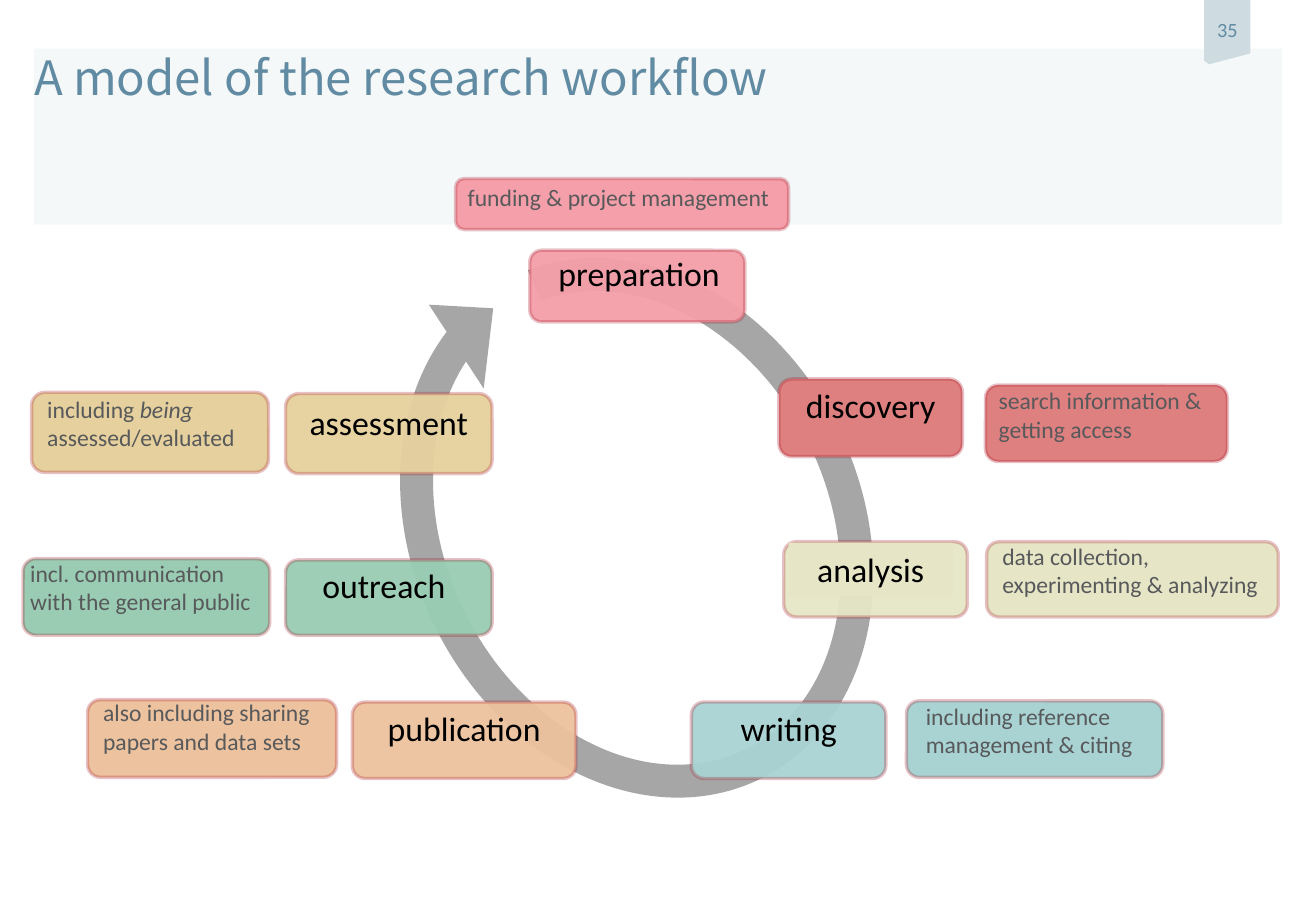
import pptx
import pptx.util
import pptx.dml.color
import pptx.enum.shapes
import pptx.enum.text
import pptx.oxml
import pptx.oxml.ns

PX = 9144
LABEL_HEIGHT = 44
ALIGN = pptx.enum.text.PP_ALIGN
ANCHOR = pptx.enum.text.MSO_ANCHOR
AUTO_SIZE = pptx.enum.text.MSO_AUTO_SIZE
SHAPE = pptx.enum.shapes.MSO_SHAPE

STAGES = [
    {"name": "preparation", "fill": "F49FA9", "opacity": 95,
     "card": (436, 206, 177, 59), "label": (5, -3, 170),
     "note_card": (375, 147, 274, 42), "note_text": (0, -1, 280, 34),
     "note": [[("funding & project management", False)]]},
    {"name": "discovery", "fill": "DF8080", "opacity": 100,
     "card": (641, 312, 151, 64), "label": (3, 0, 145),
     "note_card": (811, 317, 199, 63), "note_text": (1, -4, 206, 57),
     "note": [[("search information &", False)], [("getting access", False)]]},
    {"name": "analysis", "fill": "E6E6C7", "opacity": 95, "label_filled": True,
     "card": (645, 446, 151, 62), "label": (4, 1, 135),
     "note_card": (812, 446, 240, 62), "note_text": (3, -5, 243, 57),
     "note": [[("data collection,", False)], [("experimenting & analyzing", False)]]},
    {"name": "writing", "fill": "A9D3D3", "opacity": 95,
     "card": (569, 578, 160, 63), "label": (6, 0, 148),
     "note_card": (746, 577, 211, 63), "note_text": (6, -4, 241, 57),
     "note": [[("including reference management & citing", False)]]},
    {"name": "publication", "fill": "EDC29E", "opacity": 95,
     "card": (290, 578, 184, 63), "label": (7, 0, 170),
     "note_card": (72, 576, 205, 64), "note_text": (3, -6, 204, 57),
     "note": [[("also including sharing", False)], [("papers and data sets", False)]]},
    {"name": "outreach", "fill": "99CCB3", "opacity": 95,
     "card": (235, 461, 170, 62), "label": (-4, -1, 170),
     "note_card": (19, 460, 203, 63), "note_text": (-4, -5, 206, 57),
     "note": [[("incl. communication", False)], [("with the general public", False)]]},
    {"name": "assessment", "fill": "E6D19E", "opacity": 95,
     "card": (235, 324, 170, 66), "label": (0, 2, 170),
     "note_card": (26, 323, 195, 66), "note_text": (3, -3, 179, 57),
     "note": [[("including ", False), ("being", True)], [("assessed/evaluated", False)]]},
]


def emu(*lengths):
    return [pptx.util.Emu(length * PX) for length in lengths]


def color(value):
    return pptx.dml.color.RGBColor.from_string(value)


def paint(fill, value, opacity=100):
    fill.solid()
    fill.fore_color.rgb = color(value)
    if opacity < 100:
        solid = fill._xPr.find(pptx.oxml.ns.qn("a:solidFill"))
        alpha = pptx.oxml.parse_xml(
            f'<a:alpha {pptx.oxml.ns.nsdecls("a")} val="{opacity * 1000}"/>')
        solid[0].append(alpha)


def write(para, text, size, value, font="Calibri", italic=False):
    span = para.add_run()
    span.text = text
    span.font.name = font
    span.font.size = pptx.util.Pt(size)
    span.font.color.rgb = color(value)
    if italic:
        span.font.italic = True


def add_card(shapes, box, fill, opacity=100):
    card = shapes.add_shape(SHAPE.ROUNDED_RECTANGLE, *emu(*box))
    card.shadow.inherit = False
    paint(card.fill, fill, opacity)
    paint(card.line.fill, "A41224", 25)
    card.line.width = pptx.util.Pt(2)


def add_text(shapes, box, lines, size, value, align):
    text_box = shapes.add_textbox(*emu(*box))
    frame = text_box.text_frame
    frame.word_wrap = True
    frame.auto_size = AUTO_SIZE.SHAPE_TO_FIT_TEXT
    for index, line in enumerate(lines):
        para = frame.add_paragraph() if index else frame.paragraphs[0]
        para.alignment = align
        for text, italic in line:
            write(para, text, size, value, italic=italic)
    return text_box


def add_title(page, box):
    title = page.shapes.title
    title.left, title.top, title.width, title.height = emu(*box)
    paint(title.fill, "F5F8F9")
    frame = title.text_frame
    frame.margin_left = frame.margin_top = frame.margin_right = frame.margin_bottom = 0
    frame.vertical_anchor = ANCHOR.TOP
    frame.word_wrap = True
    frame.auto_size = AUTO_SIZE.NONE
    para = frame.paragraphs[0]
    para.alignment = ALIGN.LEFT
    write(para, "A model of the research workflow", 28, "608BA3", "Noto Sans CJK SC")


def add_page_number(page, box):
    left, top, width, height = box
    builder = page.shapes.build_freeform(left, top, scale=PX)
    builder.add_line_segments([
        (left + width, top), (left + width, top + height - 9),
        (left + 4, top + height), (left, top + height - 3)])
    tab = builder.convert_to_shape()
    tab.shadow.inherit = False
    paint(tab.fill, "CEDBE0")
    tab.line.fill.background()
    frame = tab.text_frame
    frame.margin_left = frame.margin_top = frame.margin_right = 0
    frame.margin_bottom = emu(4)[0]
    frame.vertical_anchor = ANCHOR.MIDDLE
    frame.word_wrap = False
    para = frame.paragraphs[0]
    para.alignment = ALIGN.CENTER
    write(para, "35", 12, "608BA3")


def add_cycle(page, box):
    arrow = page.shapes.add_shape(SHAPE.CIRCULAR_ARROW, *emu(*box))
    arrow.shadow.inherit = False
    arrow.rotation = 243.6
    for index, value in enumerate((0.064, 7.022, 204.925, 2.114, 0.097)):
        arrow.adjustments[index] = value
    paint(arrow.fill, "A6A6A6")
    arrow.line.fill.background()


def add_stage(page, box, stage):
    add_card(page.shapes, box, stage["fill"], stage["opacity"])
    shift_x, shift_y, width = stage["label"]
    label_box = (box[0] + shift_x, box[1] + shift_y, width, LABEL_HEIGHT)
    label = add_text(page.shapes, label_box, [[(stage["name"], False)]],
                     20, "000000", ALIGN.CENTER)
    if stage.get("label_filled"):
        paint(label.fill, stage["fill"])


def add_note(page, box, stage):
    group = page.shapes.add_group_shape()
    add_card(group.shapes, box, stage["fill"])
    shift_x, shift_y, width, height = stage["note_text"]
    text_box = (box[0] + shift_x, box[1] + shift_y, width, height)
    add_text(group.shapes, text_box, stage["note"], 14, "58595B", ALIGN.LEFT)


def main():
    deck = pptx.Presentation()
    deck.slide_width, deck.slide_height = emu(1083, 750)
    page = deck.slides.add_slide(deck.slide_layouts[5])
    add_title(page, (28, 40, 1027, 145))
    add_page_number(page, (991, 0, 38, 53))
    add_cycle(page, (266, 222, 516, 425))
    for stage in STAGES:
        add_stage(page, stage["card"], stage)
        add_note(page, stage["note_card"], stage)
    deck.save("out.pptx")


if __name__ == "__main__":
    main()
